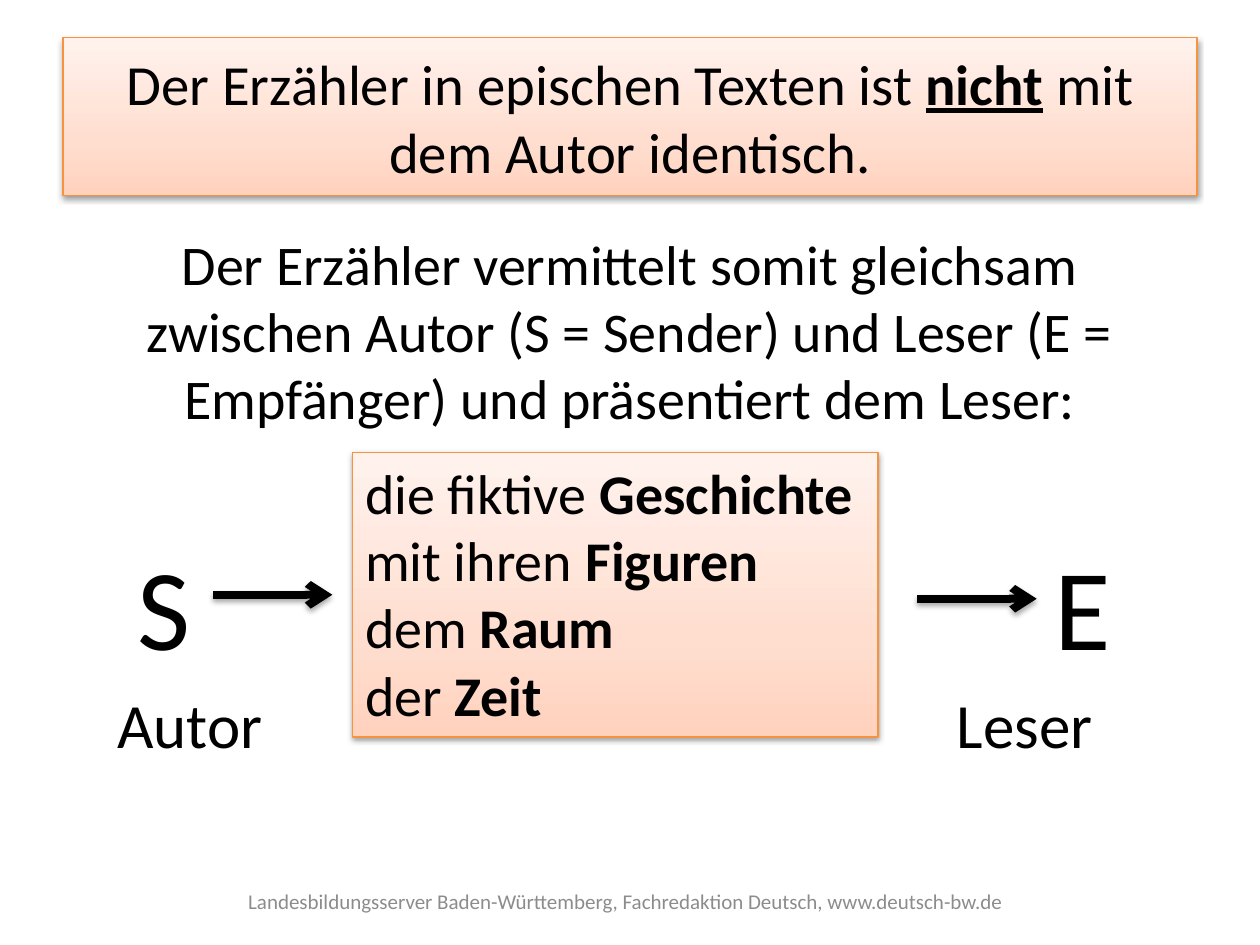
from lxml import etree
from pptx import Presentation
from pptx.dml.color import RGBColor
from pptx.enum.shapes import MSO_CONNECTOR, MSO_SHAPE
from pptx.enum.text import MSO_ANCHOR, PP_ALIGN
from pptx.oxml import parse_xml
from pptx.oxml.ns import qn
from pptx.util import Cm, Pt

RECTANGLE = MSO_SHAPE.RECTANGLE
STRAIGHT = MSO_CONNECTOR.STRAIGHT
LEFT, CENTER = PP_ALIGN.LEFT, PP_ALIGN.CENTER
TOP, MIDDLE = MSO_ANCHOR.TOP, MSO_ANCHOR.MIDDLE

FONT = "Calibri"
BLACK, GREY, ORANGE = "000000", "8C8C8C", "F69240"
PEACH_STOPS = [(0, "FFD2BD"), (35, "FFDED0"), (100, "FFF2ED")]
NAMESPACE = 'xmlns:a="http://schemas.openxmlformats.org/drawingml/2006/main"'


def color(hex_string):
    return RGBColor.from_string(hex_string)


def write_text(shape, paragraphs, size=32, font_color=BLACK, align=LEFT,
               anchor=TOP, inset=None):
    """Each paragraph is a list of (text, emphasis); emphasis: "", "b" or "bu"."""
    frame = shape.text_frame
    frame.word_wrap = True
    frame.vertical_anchor = anchor
    if inset is not None:
        frame.margin_left = frame.margin_right = Cm(inset)
        frame.margin_top = frame.margin_bottom = Cm(inset)
    for index, runs in enumerate(paragraphs):
        paragraph = frame.paragraphs[0] if index == 0 else frame.add_paragraph()
        paragraph.alignment = align
        for text, emphasis in runs:
            run = paragraph.add_run()
            run.text = text
            run.font.name = FONT
            run.font.size = Pt(size)
            run.font.color.rgb = color(font_color)
            run.font.bold = "b" in emphasis
            run.font.underline = "u" in emphasis


def add_shadow(shape, opacity, distance):
    shape._element.spPr.append(parse_xml(
        f'<a:effectLst {NAMESPACE}><a:outerShdw blurRad="40000" dist="{Pt(distance)}" '
        f'dir="5400000" rotWithShape="0"><a:srgbClr val="{BLACK}">'
        f'<a:alpha val="{opacity * 1000}"/></a:srgbClr></a:outerShdw></a:effectLst>'))


def fill_peach(shape):
    shape.fill.gradient()
    shape.fill.gradient_angle = 90
    stop_list = shape._element.spPr.find(qn("a:gradFill")).find(qn("a:gsLst"))
    for stop in list(stop_list):
        stop_list.remove(stop)
    for position, hex_string in PEACH_STOPS:
        stop = etree.SubElement(stop_list, qn("a:gs"), pos=str(position * 1000))
        etree.SubElement(stop, qn("a:srgbClr"), val=hex_string)


def add_panel(slide, left, top, width, height, paragraphs, **text_format):
    panel = slide.shapes.add_shape(RECTANGLE, Cm(left), Cm(top), Cm(width), Cm(height))
    fill_peach(panel)
    panel.line.color.rgb = color(ORANGE)
    panel.line.width = Pt(0.75)
    add_shadow(panel, 38, 1.6)
    write_text(panel, paragraphs, **text_format)


def add_text(slide, left, top, width, height, text, **text_format):
    box = slide.shapes.add_textbox(Cm(left), Cm(top), Cm(width), Cm(height))
    write_text(box, [[(text, "")]], **text_format)


def add_label(slide, center, top, text, size):
    width = 5
    add_text(slide, center - width / 2, top, width, size * 0.043, text,
             size=size, align=CENTER, inset=0)


def add_arrow(slide, left, y, length=2.41):
    arrow = slide.shapes.add_connector(STRAIGHT, Cm(left), Cm(y), Cm(left + length), Cm(y))
    arrow.line.color.rgb = color(BLACK)
    arrow.line.width = Pt(4.5)
    etree.SubElement(arrow.line._get_or_add_ln(), qn("a:tailEnd"), type="arrow")
    add_shadow(arrow, 35, 1.8)


def main():
    presentation = Presentation()
    presentation.slide_width = Cm(25.4)
    presentation.slide_height = Cm(19.05)
    slide = presentation.slides.add_slide(presentation.slide_layouts[6])

    # Title and explanation
    add_panel(slide, 1.27, 0.76, 22.86, 3.18,
              [[("Der Erzähler in epischen Texten ist ", ""), ("nicht", "bu"),
                (" mit dem Autor identisch.", "")]],
              size=32.4, align=CENTER, anchor=MIDDLE)
    add_text(slide, 1.6, 4.5, 22.2, 4.4,
             "Der Erzähler vermittelt somit gleichsam zwischen Autor (S = Sender) "
             "und Leser (E = Empfänger) und präsentiert dem Leser:", align=CENTER)

    # Sender and receiver
    for center, letter in [(3.3, "S"), (21.82, "E")]:
        add_label(slide, center, 10.79, letter, 66)
    for center, role in [(3.83, "Autor"), (20.66, "Leser")]:
        add_label(slide, center, 13.81, role, 36)

    # What the narrator presents
    topics = [("die fiktive ", "Geschichte"), ("mit ihren ", "Figuren"),
              ("dem ", "Raum"), ("der ", "Zeit")]
    add_panel(slide, 7.11, 9.12, 10.59, 5.74,
              [[(lead, ""), (topic, "b")] for lead, topic in topics])

    # Arrows from sender to receiver
    add_arrow(slide, 4.29, 11.99)
    add_arrow(slide, 18.49, 12.07)

    # Footer
    add_text(slide, 3.71, 17.65, 17.81, 1.02,
             "Landesbildungsserver Baden-Württemberg, Fachredaktion Deutsch, "
             "www.deutsch-bw.de",
             size=12, font_color=GREY, align=CENTER, anchor=MIDDLE)

    presentation.save("out.pptx")


if __name__ == "__main__":
    main()
